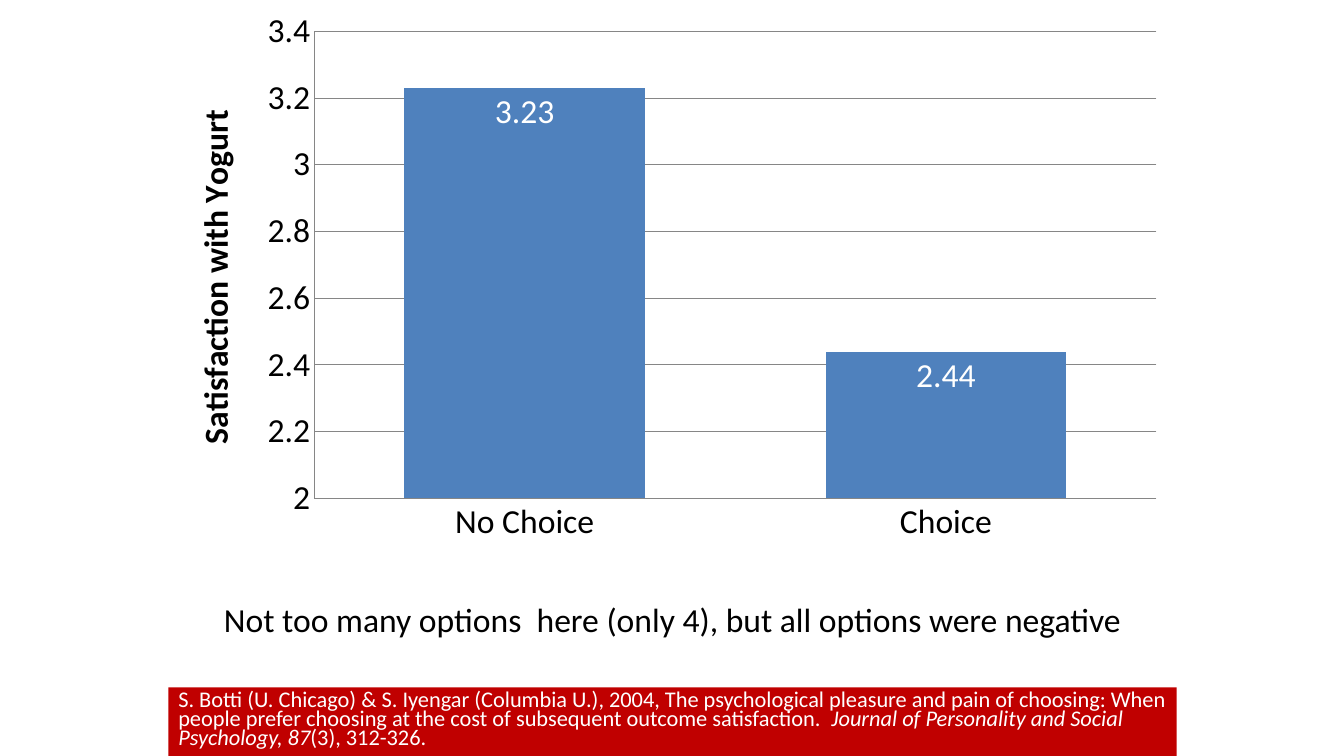
"""Build a slide with a column chart of yogurt satisfaction, a remark and its citation."""
from dataclasses import dataclass

import lxml.etree
import pptx
import pptx.chart.data
import pptx.dml.color
import pptx.enum.chart
import pptx.enum.shapes
import pptx.enum.text
import pptx.util

Inches = pptx.util.Inches
Pt = pptx.util.Pt

FONT = "Calibri"
BLACK, WHITE, GREY = "000000", "FFFFFF", "868686"
BLUE, RED = "4F81BD", "C00000"
LEFT, WIDTH = Inches(1.67), Inches(10)


@dataclass(frozen=True)
class Condition:
    label: str
    satisfaction: float


@dataclass(frozen=True)
class Phrase:
    text: str
    italic: bool = False


CONDITIONS = [Condition("No Choice", 3.23), Condition("Choice", 2.44)]
CITATION = [
    Phrase("S. Botti (U. Chicago) & S. Iyengar (Columbia U.), 2004, The psychological pleasure "
           "and pain of choosing: When people prefer choosing at the cost of subsequent "
           "outcome satisfaction.  "),
    Phrase("Journal of Personality and Social Psychology, 87", italic=True),
    Phrase("(3), 312-326."),
]


def rgb(value: str) -> pptx.dml.color.RGBColor:
    return pptx.dml.color.RGBColor.from_string(value)


def style_font(font, *, size: float = 24, color: str = BLACK, bold: bool = False,
               italic: bool = False) -> None:
    font.name, font.size = FONT, Pt(size)
    font.bold, font.italic = bold, italic
    font.color.rgb = rgb(color)


def write(paragraph, text: str, **style) -> None:
    run = paragraph.add_run()
    run.text = text
    style_font(run.font, **style)


def style_axis(axis) -> None:
    axis.major_tick_mark = axis.minor_tick_mark = pptx.enum.chart.XL_TICK_MARK.NONE
    style_font(axis.tick_labels.font)
    axis.format.line.color.rgb = rgb(GREY)
    axis.format.line.width = Pt(0.75)


def add_satisfaction_chart(slide, conditions: list[Condition]) -> None:
    satisfaction = pptx.chart.data.CategoryChartData()
    satisfaction.categories = [condition.label for condition in conditions]
    satisfaction.add_series("Series 1", [condition.satisfaction for condition in conditions])
    chart = slide.shapes.add_chart(
        pptx.enum.chart.XL_CHART_TYPE.COLUMN_CLUSTERED,
        LEFT, Inches(0), WIDTH, Inches(5.5), satisfaction).chart
    chart.has_legend = chart.has_title = False
    style_font(chart.font, size=10)

    style_axis(chart.category_axis)
    scale = chart.value_axis
    style_axis(scale)
    scale.minimum_scale = 2
    scale.has_major_gridlines = True
    scale.major_gridlines.format.line.color.rgb = rgb(GREY)
    scale.major_gridlines.format.line.width = Pt(0.75)
    write(scale.axis_title.text_frame.paragraphs[0], "Satisfaction with Yogurt", bold=True)

    columns = chart.plots[0]
    columns.gap_width, columns.overlap = 75, 40
    columns.vary_by_categories = False
    ratings = columns.series[0]
    ratings.format.fill.solid()
    ratings.format.fill.fore_color.rgb = rgb(BLUE)
    labels = ratings.data_labels
    labels.show_value = True
    labels.position = pptx.enum.chart.XL_LABEL_POSITION.INSIDE_END
    style_font(labels.font, color=WHITE)


def add_remark(slide, text: str) -> None:
    remark = slide.shapes.title
    remark.left, remark.top, remark.width, remark.height = LEFT, Inches(6), WIDTH, Inches(0.28)
    frame = remark.text_frame
    frame.auto_size = pptx.enum.text.MSO_AUTO_SIZE.NONE
    frame.vertical_anchor = pptx.enum.text.MSO_ANCHOR.MIDDLE
    frame.paragraphs[0].alignment = pptx.enum.text.PP_ALIGN.CENTER
    write(frame.paragraphs[0], text)


def add_citation(slide, phrases: list[Phrase]) -> None:
    banner = slide.shapes.add_shape(
        pptx.enum.shapes.MSO_SHAPE.RECTANGLE, LEFT, Inches(6.82), WIDTH, Inches(0.68))
    banner.shadow.inherit = False
    banner.fill.solid()
    banner.fill.fore_color.rgb = rgb(RED)
    banner.line.fill.background()
    frame = banner.text_frame
    frame.word_wrap = True
    frame.auto_size = pptx.enum.text.MSO_AUTO_SIZE.SHAPE_TO_FIT_TEXT
    frame.vertical_anchor = pptx.enum.text.MSO_ANCHOR.TOP
    reference = frame.paragraphs[0]
    reference.alignment = pptx.enum.text.PP_ALIGN.LEFT
    reference.line_spacing = 0.7
    for phrase in phrases:
        write(reference, phrase.text, size=16, color=WHITE, italic=phrase.italic)


def main() -> None:
    deck = pptx.Presentation()
    deck.slide_width, deck.slide_height = Inches(13.33), Inches(7.5)
    slide = deck.slides.add_slide(deck.slide_layouts.get_by_name("Title Only"))
    add_remark(slide, "Not too many options  here (only 4), but all options were negative")
    add_satisfaction_chart(slide, CONDITIONS)
    add_citation(slide, CITATION)
    deck.save("out.pptx")


if __name__ == "__main__":
    main()
